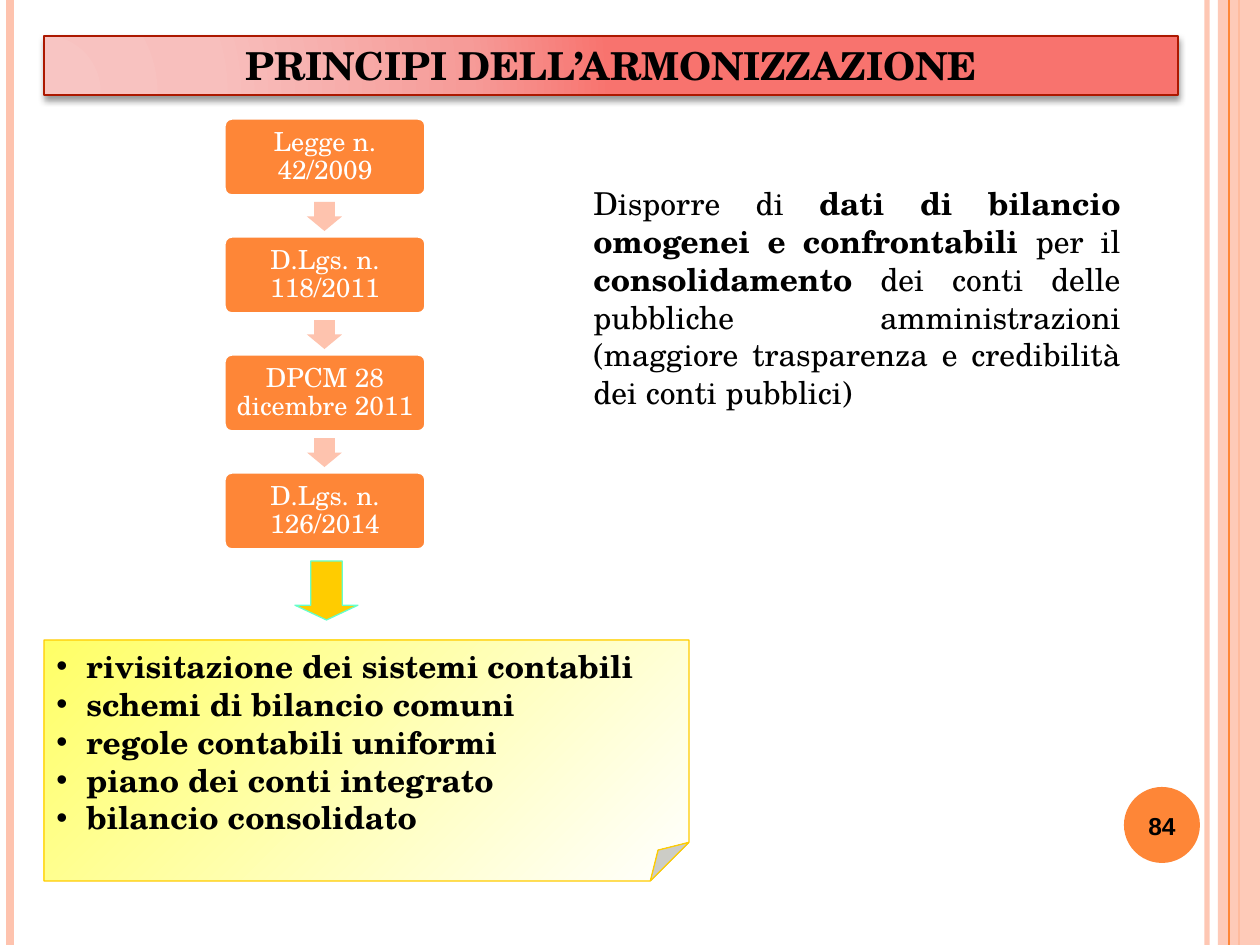
from lxml import etree
from pptx import Presentation, util as u
from pptx.dml.color import RGBColor
from pptx.enum import shapes, text
from pptx.oxml import parse_xml
from pptx.oxml.ns import nsdecls, qn

PX = 914400 / 126
SERIF = "TeX Gyre Schola"
COLORS = {
    "orange": "FE8637", "peach": "FEC3AE", "yellow": "FFFF66", "gold": "FFCC00",
    "aqua": "66FFCC", "brick": "AC1800", "white": "FFFFFF", "black": "000000",
}
TITLE_STOPS = [(0, "F8C5C3"), (30, "F8BFBD"), (75, "F69B98"), (100, "F8736E")]
LAWS = ["Legge n. 42/2009", "D.Lgs. n. 118/2011", "DPCM 28 dicembre 2011", "D.Lgs. n. 126/2014"]
GOALS = [
    "rivisitazione dei sistemi contabili", "schemi di bilancio comuni",
    "regole contabili uniformi", "piano dei conti integrato", "bilancio consolidato",
]
PURPOSE = [
    ("Disporre di ", False),
    ("dati di bilancio omogenei e confrontabili ", True),
    ("per il ", False),
    ("consolidamento", True),
    (" dei conti delle pubbliche amministrazioni (maggiore trasparenza e credibilità"
     " dei conti pubblici)", False),
]


def px(*lengths):
    return [u.Emu(round(length * PX)) for length in lengths]


def rgb(name):
    return RGBColor.from_string(COLORS[name])


def set_alpha(color_parent, percent):
    color = next(color_parent.iter(qn("a:srgbClr")))
    etree.SubElement(color, qn("a:alpha"), val=str(percent * 1000))


def add_rule(page, x, color, points, alpha=None):
    rule = page.shapes.add_connector(shapes.MSO_CONNECTOR.STRAIGHT, *px(x, 0, x, 945))
    rule.line.color.rgb = rgb(color)
    rule.line.width = u.Pt(points)
    if alpha:
        set_alpha(rule.line._get_or_add_ln(), alpha)
    etree.SubElement(rule._element.spPr, qn("a:effectLst"))


def set_adjustments(block, adjust):
    guides = next(block._element.spPr.iter(qn("a:avLst")))
    for guide in list(guides):
        guides.remove(guide)
    for name, value in adjust.items():
        etree.SubElement(guides, qn("a:gd"), name=name, fmla=f"val {round(value * 100000)}")


def add_block(page, kind, area, fill, line=None, points=0.75, adjust=None):
    block = page.shapes.add_shape(kind, *px(*area))
    block.shadow.inherit = False
    block.fill.solid()
    block.fill.fore_color.rgb = rgb(fill)
    if line:
        block.line.color.rgb = rgb(line)
        block.line.width = u.Pt(points)
    else:
        block.line.fill.background()
    if adjust:
        set_adjustments(block, adjust)
    return block


def style(para, size, color="black", bold=None, align=text.PP_ALIGN.CENTER, name=SERIF):
    para.alignment = align
    para.font.size = u.Pt(size)
    para.font.name = name
    para.font.bold = bold
    para.font.color.rgb = rgb(color)


def prepare(shape, anchor):
    frame = shape.text_frame
    frame.word_wrap = True
    frame.vertical_anchor = anchor
    return frame


def add_rails(page):
    add_rule(page, 1207, "peach", 3, 93)
    add_rule(page, 10, "peach", 4.5)
    add_rule(page, 1239, "orange", 1.5)
    band = add_block(page, shapes.MSO_SHAPE.RECTANGLE, (1218, 0, 42, 945), "peach")
    set_alpha(band._element.spPr, 87)
    add_rule(page, 1229, "orange", 0.75)


def add_title(page):
    title = add_block(page, shapes.MSO_SHAPE.RECTANGLE, (44, 36, 1134, 59), "white", "brick", 1)
    stops = "".join(
        f'<a:gs pos="{place * 1000}"><a:srgbClr val="{color}"/></a:gs>'
        for place, color in TITLE_STOPS)
    gradient = parse_xml(
        f'<a:gradFill {nsdecls("a")} rotWithShape="1"><a:gsLst>{stops}</a:gsLst>'
        '<a:path path="circle"><a:fillToRect l="5000" t="100000" r="120000" b="10000"/>'
        '</a:path></a:gradFill>')
    properties = title._element.spPr
    properties.replace(properties.find(qn("a:solidFill")), gradient)
    shadow = parse_xml(
        f'<a:outerShdw {nsdecls("a")} blurRad="50800" dist="25400" dir="5400000"'
        ' rotWithShape="0"><a:srgbClr val="000000"><a:alpha val="40000"/></a:srgbClr>'
        '</a:outerShdw>')
    properties.find(qn("a:effectLst")).append(shadow)
    para = prepare(title, text.MSO_ANCHOR.TOP).paragraphs[0]
    para.text = "PRINCIPI DELL’ARMONIZZAZIONE"
    style(para, 22, bold=True)


def add_law_flow(page):
    pitch = 118
    for index, law in enumerate(LAWS):
        step = index * pitch
        box = add_block(page, shapes.MSO_SHAPE.ROUNDED_RECTANGLE, (224, 118 + step, 202, 78),
                        "orange", "white", 2, {"adj": 0.1})
        frame = prepare(box, text.MSO_ANCHOR.MIDDLE)
        frame.margin_left, frame.margin_right, frame.margin_top, frame.margin_bottom = px(5, 5, 5, 5)
        para = frame.paragraphs[0]
        para.text = law
        para.line_spacing = 0.9
        style(para, 15, "white")
        if index < len(LAWS) - 1:
            arrow = add_block(page, shapes.MSO_SHAPE.RIGHT_ARROW, (310, 199 + step, 29, 35),
                              "peach", adjust={"adj1": 0.6, "adj2": 0.5})
            arrow.rotation = 90
    add_block(page, shapes.MSO_SHAPE.DOWN_ARROW, (295, 561, 63, 59), "gold", "aqua",
              adjust={"adj1": 0.5, "adj2": 0.25})


def add_goals(page):
    note = add_block(page, shapes.MSO_SHAPE.FOLDED_CORNER, (44, 640, 645, 241), "yellow", "gold",
                     adjust={"adj": 0.16})
    note.fill.gradient()
    note.fill.gradient_angle = 315
    for stop, color, place in zip(note.fill.gradient_stops, ("yellow", "white"), (0, 1)):
        stop.color.rgb = rgb(color)
        stop.position = place
    frame = prepare(note, text.MSO_ANCHOR.BOTTOM)
    for index, goal in enumerate(GOALS):
        para = frame.add_paragraph() if index else frame.paragraphs[0]
        para.text = goal
        properties = para._p.get_or_add_pPr()
        indent = px(30)[0]
        properties.set("marL", str(indent))
        properties.set("indent", str(-indent))
        etree.SubElement(properties, qn("a:buFont"), typeface="Arial")
        etree.SubElement(properties, qn("a:buChar"), char="•")
        style(para, 18, bold=True, align=text.PP_ALIGN.LEFT)


def add_purpose(page):
    box = page.shapes.add_textbox(*px(581, 178, 552, 242))
    para = prepare(box, text.MSO_ANCHOR.TOP).paragraphs[0]
    for words, bold in PURPOSE:
        span = para.add_run()
        span.text = words
        span.font.bold = bold
    style(para, 18, align=text.PP_ALIGN.JUSTIFY)


def add_page_number(page):
    box = page.shapes.add_textbox(*px(1120, 790, 84, 72))
    para = prepare(box, text.MSO_ANCHOR.MIDDLE).paragraphs[0]
    para.text = "84"
    style(para, 14, bold=True, name="Arial")


def main():
    deck = Presentation()
    deck.slide_width, deck.slide_height = px(1260, 945)
    page = deck.slides.add_slide(deck.slide_layouts[6])
    add_rails(page)
    add_block(page, shapes.MSO_SHAPE.OVAL, (1124, 787, 76, 76), "orange")
    add_goals(page)
    add_title(page)
    add_law_flow(page)
    add_purpose(page)
    add_page_number(page)
    deck.save("out.pptx")


if __name__ == "__main__":
    main()
